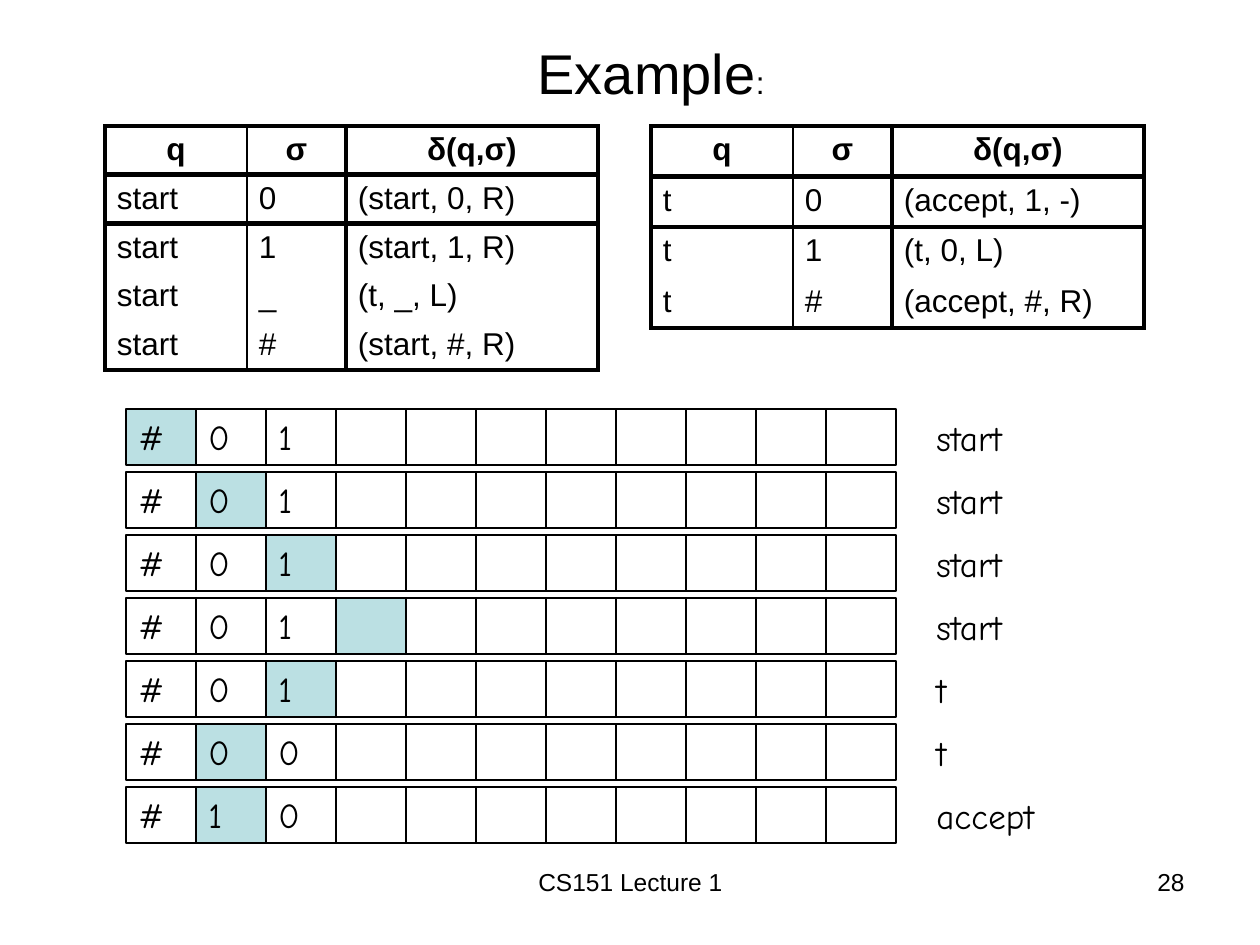
import pptx
import pptx.dml.color
import pptx.enum.shapes
import pptx.enum.text
import pptx.oxml
import pptx.oxml.ns
import pptx.util

EMU_PER_PX = 914400 / 126
BLACK = pptx.dml.color.RGBColor(0x00, 0x00, 0x00)
HEAD_BLUE = pptx.dml.color.RGBColor(0xBB, 0xE0, 0xE3)
ALIGN = pptx.enum.text.PP_ALIGN
ANCHOR = pptx.enum.text.MSO_ANCHOR
PLAIN_STYLE = "{2D5ABB26-0587-4C30-8999-92F81FD0307C}"

TAPE_FONT = {"name": "Comic Neue", "size": pptx.util.Pt(20)}
TABLE_FONT = {"name": "Arial", "size": pptx.util.Pt(18)}
TITLE_FONT = {"name": "Arial", "size": pptx.util.Pt(32)}
FOOTER_FONT = {"name": "Arial", "size": pptx.util.Pt(14)}

# Transition tables
HEADER = ("q", "σ", "δ(q,σ)")
START_RULES = [
    ("start", "0", "(start, 0, R)"),
    ("start", "1", "(start, 1, R)"),
    ("start", "_", "(t, _, L)"),
    ("start", "#", "(start, #, R)"),
]
T_RULES = [
    ("t", "0", "(accept, 1, -)"),
    ("t", "1", "(t, 0, L)"),
    ("t", "#", "(accept, #, R)"),
]
COLUMN_WIDTHS = (142, 99, 252)
COLUMN_EDGES = (2.25, 1, 3, 2.25)

# Machine steps: tape content, head position, state
STEPS = [
    ("#01", 0, "start"),
    ("#01", 1, "start"),
    ("#01", 2, "start"),
    ("#01", 3, "start"),
    ("#01", 2, "t"),
    ("#00", 1, "t"),
    ("#10", 1, "accept"),
]
TAPE_LENGTH = 11
TAPE_LEFT, TAPE_TOP = 126, 409
CELL_WIDTH, CELL_HEIGHT, STEP_PITCH = 70, 56, 63


def px(length):
    return pptx.util.Emu(round(length * EMU_PER_PX))


def apply(target, values):
    for name, value in values.items():
        setattr(target, name, value)


def write(frame, text, font, align=ALIGN.LEFT):
    paragraph = frame.paragraphs[0]
    paragraph.alignment = align
    run = paragraph.add_run()
    run.text = text
    apply(run.font, font)
    run.font.color.rgb = BLACK
    return paragraph


def add_text(slide, box, text, font, align=ALIGN.LEFT):
    frame = slide.shapes.add_textbox(*map(px, box)).text_frame
    frame.word_wrap = True
    return write(frame, text, font, align)


def set_borders(cell, widths):
    properties = cell._tc.get_or_add_tcPr()
    sides = [(side, width) for side, width in zip("LRTB", widths) if width]
    for index, (side, width) in enumerate(sides):
        line = pptx.oxml.parse_xml(
            f'<a:ln{side} {pptx.oxml.ns.nsdecls("a")} w="{pptx.util.Pt(width)}">'
            f'<a:solidFill><a:srgbClr val="{BLACK}"/></a:solidFill></a:ln{side}>'
        )
        properties.insert(index, line)


def add_rules(slide, left, top, height, rules):
    rows = [HEADER] + rules
    box = map(px, (left, top, sum(COLUMN_WIDTHS), height))
    table = slide.shapes.add_table(len(rows), len(HEADER), *box).table
    apply(table, {"first_row": False, "horz_banding": False})
    table._tbl.tblPr.find(pptx.oxml.ns.qn("a:tableStyleId")).text = PLAIN_STYLE
    for column, width in zip(table.columns, COLUMN_WIDTHS):
        column.width = px(width)

    row_edges = [2.25, 3] + [0] * (len(rows) - 2) + [2.25]
    margins = {"margin_left": px(12), "margin_right": px(12),
               "margin_top": px(6), "margin_bottom": px(5)}
    for r, values in enumerate(rows):
        table.rows[r].height = px(height / len(rows))
        align = ALIGN.LEFT if r else ALIGN.CENTER
        for c, value in enumerate(values):
            cell = table.cell(r, c)
            apply(cell, margins)
            cell.fill.background()
            write(cell.text_frame, value, TABLE_FONT | {"bold": r == 0}, align)
            set_borders(cell, COLUMN_EDGES[c:c + 2] + tuple(row_edges[r:r + 2]))


def add_tape_cell(slide, left, top, symbol, under_head):
    square = slide.shapes.add_shape(
        pptx.enum.shapes.MSO_SHAPE.RECTANGLE,
        *map(px, (left, top, CELL_WIDTH, CELL_HEIGHT)))
    square.shadow.inherit = False
    if under_head:
        square.fill.solid()
        square.fill.fore_color.rgb = HEAD_BLUE
    else:
        square.fill.background()
    square.line.color.rgb = BLACK
    square.line.width = pptx.util.Pt(0.75)
    if symbol:
        square.text_frame.vertical_anchor = ANCHOR.TOP
        write(square.text_frame, symbol, TAPE_FONT)


def add_step(slide, top, symbols, head, state):
    for position in range(TAPE_LENGTH):
        add_tape_cell(slide, TAPE_LEFT + position * CELL_WIDTH, top,
                      symbols[position:position + 1], position == head)
    add_text(slide, (924, top + 1, 210, 54), state, TAPE_FONT)


def main():
    deck = pptx.Presentation()
    apply(deck, {"slide_width": px(1260), "slide_height": px(945)})
    slide = deck.slides.add_slide(deck.slide_layouts[6])

    # Title
    title = add_text(slide, (504, 32, 294, 79), "Example", TITLE_FONT, ALIGN.CENTER)
    colon = title.add_run()
    colon.text = ":"
    apply(colon.font, TABLE_FONT)
    colon.font.color.rgb = BLACK

    # Transition function
    add_rules(slide, 105, 126, 240, START_RULES)
    add_rules(slide, 651, 126, 202, T_RULES)

    # Tape at each step
    for number, step in enumerate(STEPS):
        add_step(slide, TAPE_TOP + number * STEP_PITCH, *step)

    # Footer
    add_text(slide, (431, 861, 399, 66), "CS151 Lecture 1", FOOTER_FONT, ALIGN.CENTER)
    add_text(slide, (903, 861, 294, 66), "28", FOOTER_FONT, ALIGN.RIGHT)

    deck.save("out.pptx")


if __name__ == "__main__":
    main()
